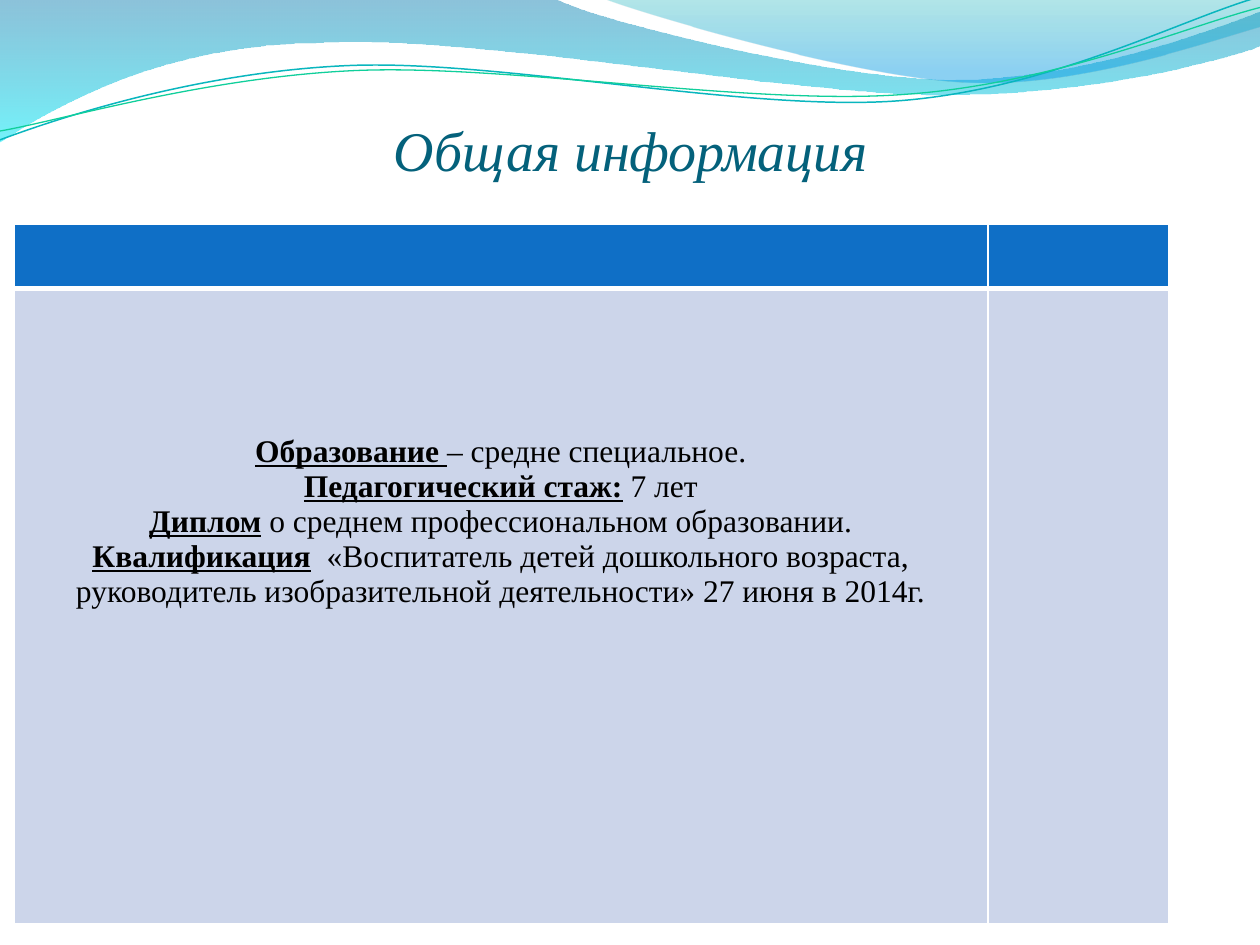
import math

from lxml import etree
from pptx import Presentation
from pptx import oxml
from pptx import util as u
from pptx.dml.color import RGBColor
from pptx.enum import text
from pptx.oxml.ns import nsdecls, qn

FONT = "Times New Roman"
WHITE = "FFFFFF"

BANDS = [
    {
        "parts": [
            [(0, -0.01)],
            [(4.4, -0.01)],
            [(4.76, 0.17), (6.64, 0.63), (7.58, 0.63)],
            [(8.53, 0.63), (9.58, 0.26), (10, 0.09)],
            [(10.01, 0.36)],
            [(9.83, 0.44), (8.7, 0.76), (7.46, 0.75)],
            [(6.22, 0.75), (3.82, 0.28), (2.57, 0.34)],
            [(1.29, 0.35), (0.46, 0.83), (-0.01, 1.13)],
            [(0, -0.01)],
        ],
        "stops": [(0, "0079AD", 45), (100, "00E9F7", 55)],
    },
    {
        "parts": [
            [(4.79, -0.01)],
            [(5.09, 0.11), (6.82, 0.62), (7.69, 0.65)],
            [(8.56, 0.69), (9.61, 0.32), (10, 0.21)],
            [(10, 0)],
            [(4.79, -0.01)],
        ],
        "stops": [(0, "00ABB4", 30), (80, "0099E4", 45), (100, "0099E4", 45)],
    },
]

STRANDS = [
    {
        "parts": [
            [(0, 1.11)],
            [(0.48, 0.93), (1.58, 0.57), (2.77, 0.52)],
            [(3.95, 0.47), (5.93, 0.89), (7.13, 0.8)],
            [(8.33, 0.71), (9.38, 0.15), (9.98, -0.02)],
        ],
        "center": (4.99, 0.58),
        "color": "09B6BE",
        "width": 0.85,
    },
    {
        "parts": [
            [(0, 1.04)],
            [(0.47, 0.96), (1.64, 0.61), (2.83, 0.56)],
            [(4.03, 0.51), (5.97, 0.84), (7.17, 0.75)],
            [(8.36, 0.67), (9.41, 0.21), (10, 0.06)],
        ],
        "center": (5, 0.59),
        "color": "10CF9B",
        "width": 0.75,
    },
]
STRAND_ROTATION = 357.3

FACTS = [
    ("Образование ", "– средне специальное."),
    ("Педагогический стаж:", " 7 лет"),
    ("Диплом", " о среднем профессиональном образовании."),
    (
        "Квалификация",
        "  «Воспитатель детей дошкольного возраста, "
        "руководитель изобразительной деятельности» 27 июня в 2014г.",
    ),
]


def rgb(value):
    """Turn a hex string into a colour."""
    return RGBColor.from_string(value)


def turn(parts, center, degrees):
    """Rotate the points of every part clockwise around a centre."""
    sine, cosine = math.sin(math.radians(degrees)), math.cos(math.radians(degrees))

    def move(x, y):
        """Rotate one point."""
        x, y = x - center[0], y - center[1]
        return center[0] + x * cosine - y * sine, center[1] + x * sine + y * cosine

    return [[move(*point) for point in part] for part in parts]


def add_outline(page, left, top, parts, close):
    """Draw a freeform whose three-point parts are cubic curves."""
    spots = [(left + u.Inches(x), top + u.Inches(y)) for part in parts for x, y in part]
    builder = page.shapes.build_freeform(*spots[0], scale=1.0)
    builder.add_line_segments(spots[1:], close=close)
    shape = builder.convert_to_shape()
    shape.shadow.inherit = False
    segments = iter(list(shape._element.iter(qn("a:lnTo"))))
    for part in parts[1:]:
        first, *others = [next(segments) for _ in part]
        if others:
            first.tag = qn("a:cubicBezTo")
        for other in others:
            first.append(other[0])
            other.getparent().remove(other)
    return shape


def fill_gradient(shape, stops):
    """Fill a shape from top to bottom with translucent stops."""
    marks = "".join(
        f'<a:gs pos="{place * 1000}"><a:srgbClr val="{color}">'
        f'<a:alpha val="{alpha * 1000}"/></a:srgbClr></a:gs>'
        for place, color, alpha in stops
    )
    gradient = oxml.parse_xml(
        f'<a:gradFill {nsdecls("a")} rotWithShape="1"><a:gsLst>{marks}</a:gsLst>'
        '<a:lin ang="5400000" scaled="0"/></a:gradFill>'
    )
    shape._element.spPr.find(qn("a:custGeom")).addnext(gradient)


def add_waves(page, left, top):
    """Draw the wave decoration across the head of the page."""
    for band in BANDS:
        shape = add_outline(page, left, top, band["parts"], True)
        fill_gradient(shape, band["stops"])
        shape.line.fill.background()
    for strand in STRANDS:
        level = turn(strand["parts"], strand["center"], 360 - STRAND_ROTATION)
        shape = add_outline(page, left, top, level, False)
        shape.rotation = STRAND_ROTATION
        shape.fill.background()
        shape.line.color.rgb = rgb(strand["color"])
        shape.line.width = u.Pt(strand["width"])


def add_span(para, words, color, **formats):
    """Append a formatted run to a paragraph."""
    span = para.add_run()
    span.text = words
    span.font.color.rgb = rgb(color)
    for name, value in {"name": FONT, **formats}.items():
        setattr(span.font, name, value)


def add_title(page, left, top, width, height):
    """Place the centred italic title, leaving one free line below it."""
    frame = page.shapes.add_textbox(left, top, width, height).text_frame
    formats = {
        "word_wrap": True,
        "vertical_anchor": text.MSO_ANCHOR.BOTTOM,
        "margin_left": 0,
        "margin_right": 0,
        "margin_top": u.Inches(0.05),
        "margin_bottom": u.Inches(0.53),
    }
    for name, value in formats.items():
        setattr(frame, name, value)
    para = frame.paragraphs[0]
    para.alignment = text.PP_ALIGN.CENTER
    add_span(para, "Общая информация", "04617B", size=u.Pt(32), italic=True)


def style_cell(cell, color, top, bottom):
    """Give a cell its white borders and its fill."""
    borders = cell._tc.get_or_add_tcPr()
    for side, points in zip("LRTB", (1, 1, top, bottom)):
        line = etree.SubElement(borders, qn(f"a:ln{side}"), w=str(u.Pt(points)))
        paint = etree.SubElement(line, qn("a:solidFill"))
        etree.SubElement(paint, qn("a:srgbClr"), val=WHITE)
    cell.fill.solid()
    cell.fill.fore_color.rgb = rgb(color)


def add_facts(page, left, top, width, height):
    """Place the table with the teacher's details."""
    side, head = u.Inches(1.44), u.Inches(0.51)
    table = page.shapes.add_table(2, 2, left, top, width, height).table
    for column, size in zip(table.columns, (width - side, side)):
        column.width = size
    for row, size in zip(table.rows, (head, height - head)):
        row.height = size
    for row, look in zip(table.rows, (("0F6FC6", 1, 3), ("CCD5EA", 3, 1))):
        for cell in row.cells:
            style_cell(cell, *look)
    cell = table.cell(1, 0)
    cell.margin_top = u.Inches(1.16)
    frame = cell.text_frame
    for index, (label, detail) in enumerate(FACTS):
        para = frame.add_paragraph() if index else frame.paragraphs[0]
        para.alignment = text.PP_ALIGN.CENTER
        add_span(para, label, "000000", size=u.Pt(18), bold=True, underline=True)
        add_span(para, detail, "000000", size=u.Pt(18), bold=False)


def main():
    """Build the deck and save it."""
    deck = Presentation()
    deck.slide_width, deck.slide_height = u.Inches(10), u.Inches(7.5)
    page = deck.slides.add_slide(deck.slide_layouts[6])
    add_waves(page, 0, 0)
    add_title(page, u.Inches(0.51), u.Inches(0.09), u.Inches(9), u.Inches(1.89))
    add_facts(page, u.Inches(0.11), u.Inches(1.78), u.Inches(9.17), u.Inches(5.55))
    deck.save("out.pptx")


if __name__ == "__main__":
    main()
